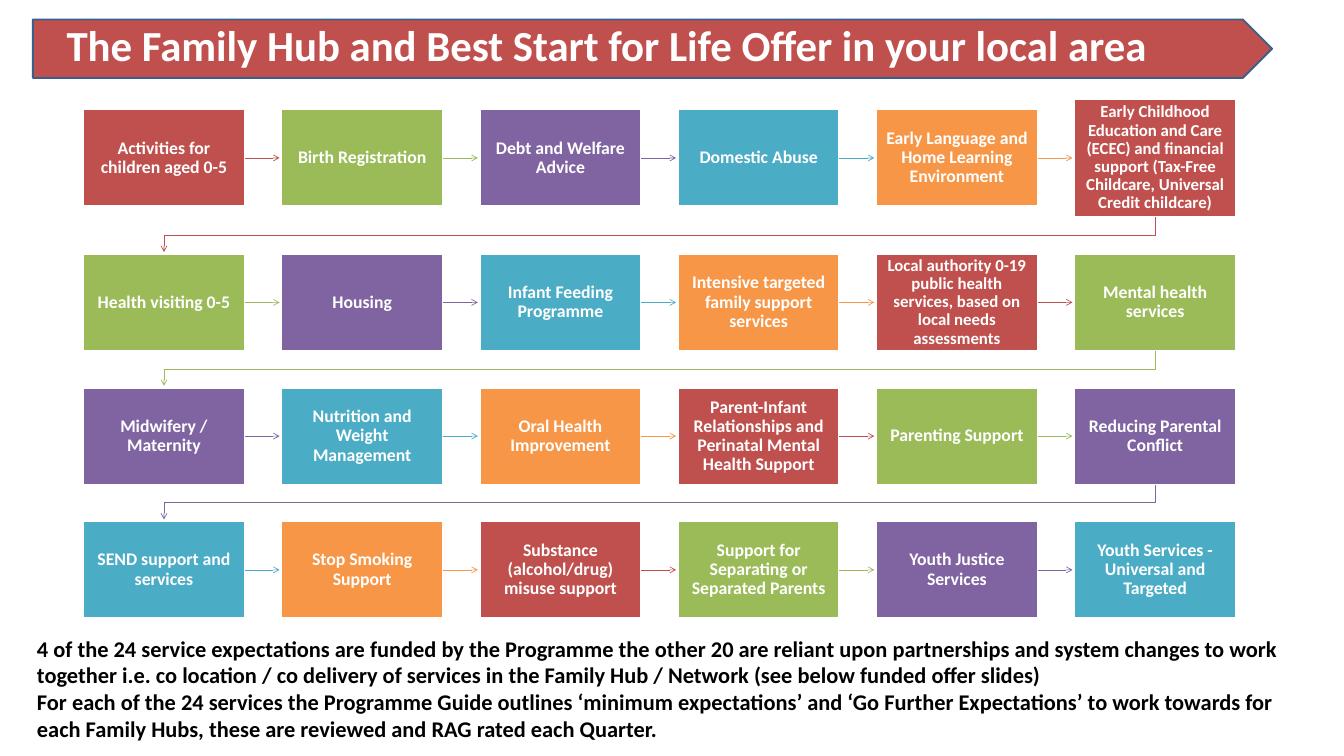
from dataclasses import dataclass

from lxml import etree
from pptx import Presentation
from pptx.dml.color import RGBColor
from pptx.enum.shapes import MSO_CONNECTOR, MSO_SHAPE
from pptx.enum.text import MSO_ANCHOR, MSO_AUTO_SIZE, PP_ALIGN
from pptx.oxml.ns import qn
from pptx.util import Inches, Pt

STRAIGHT = MSO_CONNECTOR.STRAIGHT
RECTANGLE, PENTAGON = MSO_SHAPE.RECTANGLE, MSO_SHAPE.PENTAGON
MIDDLE, NO_AUTOFIT = MSO_ANCHOR.MIDDLE, MSO_AUTO_SIZE.NONE
LEFT, CENTER = PP_ALIGN.LEFT, PP_ALIGN.CENTER
RIGHT_SIDE = 3

WHITE = RGBColor(0xFF, 0xFF, 0xFF)
BLACK = RGBColor(0x00, 0x00, 0x00)
NAVY = RGBColor(0x3A, 0x5F, 0x8C)
RED = RGBColor(0xC0, 0x50, 0x4D)
GREEN = RGBColor(0x9B, 0xBB, 0x59)
PURPLE = RGBColor(0x80, 0x64, 0xA2)
TEAL = RGBColor(0x4B, 0xAC, 0xC6)
ORANGE = RGBColor(0xF7, 0x96, 0x46)
COLOR_CYCLE = (RED, GREEN, PURPLE, TEAL, ORANGE)

COLUMNS = 6
GRID_LEFT, COLUMN_PITCH = 1.24, 2.95
BOX_WIDTH, BOX_HEIGHT = 2.4, 1.44
ROW_TOPS = (1.63, 3.78, 5.77, 7.76)
ARROW_GAP = 0.03
TURN_HEIGHT = 0.28


@dataclass
class Service:
    name: str
    size: float = 19
    height: float = BOX_HEIGHT


SERVICES = (
    Service("Activities for children aged 0-5"),
    Service("Birth Registration"),
    Service("Debt and Welfare Advice"),
    Service("Domestic Abuse"),
    Service("Early Language and Home Learning Environment"),
    Service("Early Childhood Education and Care (ECEC) and financial support "
            "(Tax-Free Childcare, Universal Credit childcare)", 18, 1.76),
    Service("Health visiting 0-5"),
    Service("Housing"),
    Service("Infant Feeding Programme"),
    Service("Intensive targeted family support services"),
    Service("Local authority 0-19 public health services, "
            "based on local needs assessments", 18),
    Service("Mental health services"),
    Service("Midwifery / Maternity"),
    Service("Nutrition and Weight Management"),
    Service("Oral Health Improvement"),
    Service("Parent-Infant Relationships and Perinatal Mental Health Support"),
    Service("Parenting Support"),
    Service("Reducing Parental Conflict"),
    Service("SEND support and services"),
    Service("Stop Smoking Support"),
    Service("Substance (alcohol/drug) misuse support"),
    Service("Support for Separating or Separated Parents"),
    Service("Youth Justice Services"),
    Service("Youth Services - Universal and Targeted"),
)

BANNER_TEXT = "The Family Hub and Best Start for Life Offer in your local area"
SUMMARY_TEXT = (
    "4 of the 24 service expectations are funded by the Programme the other 20 "
    "are reliant upon partnerships and system changes to work together i.e. co "
    "location / co delivery of services in the Family Hub / Network (see below "
    "funded offer slides)\v"
    "For each of the 24 services the Programme Guide outlines ‘minimum "
    "expectations’ and ‘Go Further Expectations’ to work towards for each "
    "Family Hubs, these are reviewed and RAG rated each Quarter."
)


def write_text(shape, text: str, size: float, color: RGBColor, alignment,
               spacing: float, margins: tuple[float, float]):
    """Fill a shape with one bold paragraph and return that paragraph."""
    frame = shape.text_frame
    frame.text = text
    frame.word_wrap = True
    frame.auto_size = NO_AUTOFIT
    frame.vertical_anchor = MIDDLE
    frame.margin_left = frame.margin_right = Inches(margins[0])
    frame.margin_top = frame.margin_bottom = Inches(margins[1])
    paragraph = frame.paragraphs[0]
    paragraph.alignment = alignment
    paragraph.line_spacing = spacing
    for run in paragraph.runs:
        run.font.name = "Calibri"
        run.font.size = Pt(size)
        run.font.bold = True
        run.font.color.rgb = color
    return paragraph


def add_block(slide, preset, left: float, top: float, width: float,
              height: float, fill: RGBColor, outline: RGBColor):
    shape = slide.shapes.add_shape(
        preset, Inches(left), Inches(top), Inches(width), Inches(height))
    shape.shadow.inherit = False
    shape.fill.solid()
    shape.fill.fore_color.rgb = fill
    shape.line.color.rgb = outline
    shape.line.width = Pt(2)
    return shape


def style_arrow(arrow, color: RGBColor) -> None:
    arrow.line.color.rgb = color
    arrow.line.width = Pt(0.75)
    line = arrow.line._get_or_add_ln()
    etree.SubElement(line, qn("a:tailEnd"), type="arrow")


def add_service(slide, index: int, service: Service):
    row, column = divmod(index, COLUMNS)
    left = GRID_LEFT + column * COLUMN_PITCH
    top = ROW_TOPS[row] - (service.height - BOX_HEIGHT) / 2
    color = COLOR_CYCLE[index % len(COLOR_CYCLE)]
    box = add_block(slide, RECTANGLE, left, top, BOX_WIDTH, service.height,
                    color, WHITE)
    write_text(box, service.name, service.size, WHITE, CENTER, 0.9, (0.12, 0.12))
    return box


def add_row_arrow(slide, source, target, color: RGBColor) -> None:
    middle = source.top + source.height // 2
    arrow = slide.shapes.add_connector(
        STRAIGHT, source.left + source.width, middle,
        target.left - Inches(ARROW_GAP), middle)
    arrow.begin_connect(source, RIGHT_SIDE)
    style_arrow(arrow, color)
    etree.SubElement(arrow._element.spPr, qn("a:effectLst"))


def add_return_arrow(slide, source, target, color: RGBColor) -> None:
    """Lead from the last box of a row down to the first box of the next."""
    start_x = source.left + source.width // 2
    end_x = target.left + target.width // 2
    turn_y = target.top - Inches(TURN_HEIGHT)
    builder = slide.shapes.build_freeform(start_x, source.top + source.height)
    builder.add_line_segments(
        [(start_x, turn_y), (end_x, turn_y),
         (end_x, target.top - Inches(ARROW_GAP))], close=False)
    arrow = builder.convert_to_shape()
    arrow.shadow.inherit = False
    arrow.fill.background()
    style_arrow(arrow, color)


def main() -> None:
    presentation = Presentation()
    presentation.slide_width = Inches(20)
    presentation.slide_height = Inches(11.25)
    slide = presentation.slides.add_slide(presentation.slide_layouts[5])

    # Banner
    banner = add_block(slide, PENTAGON, 0.49, 0.29, 18.44, 0.87, RED, NAVY)
    heading = write_text(banner, BANNER_TEXT, 45.9, WHITE, LEFT, 0.8, (0.2, 0.1))
    heading.space_after = Pt(12)
    heading._p.get_or_add_pPr().set("marL", str(Inches(0.3)))

    # Service boxes
    boxes = [add_service(slide, index, service)
             for index, service in enumerate(SERVICES)]

    # Arrows from each service to the next
    for index, (source, target) in enumerate(zip(boxes, boxes[1:])):
        ends_row = index % COLUMNS == COLUMNS - 1
        add_arrow = add_return_arrow if ends_row else add_row_arrow
        add_arrow(slide, source, target, COLOR_CYCLE[index % len(COLOR_CYCLE)])

    # Summary in the title placeholder
    summary = slide.shapes.title
    summary.left, summary.top = Inches(0.45), Inches(9.53)
    summary.width, summary.height = Inches(18.96), Inches(1.43)
    write_text(summary, SUMMARY_TEXT, 24, BLACK, LEFT, 1.0, (0.1, 0.05))

    presentation.save("out.pptx")


if __name__ == "__main__":
    main()
